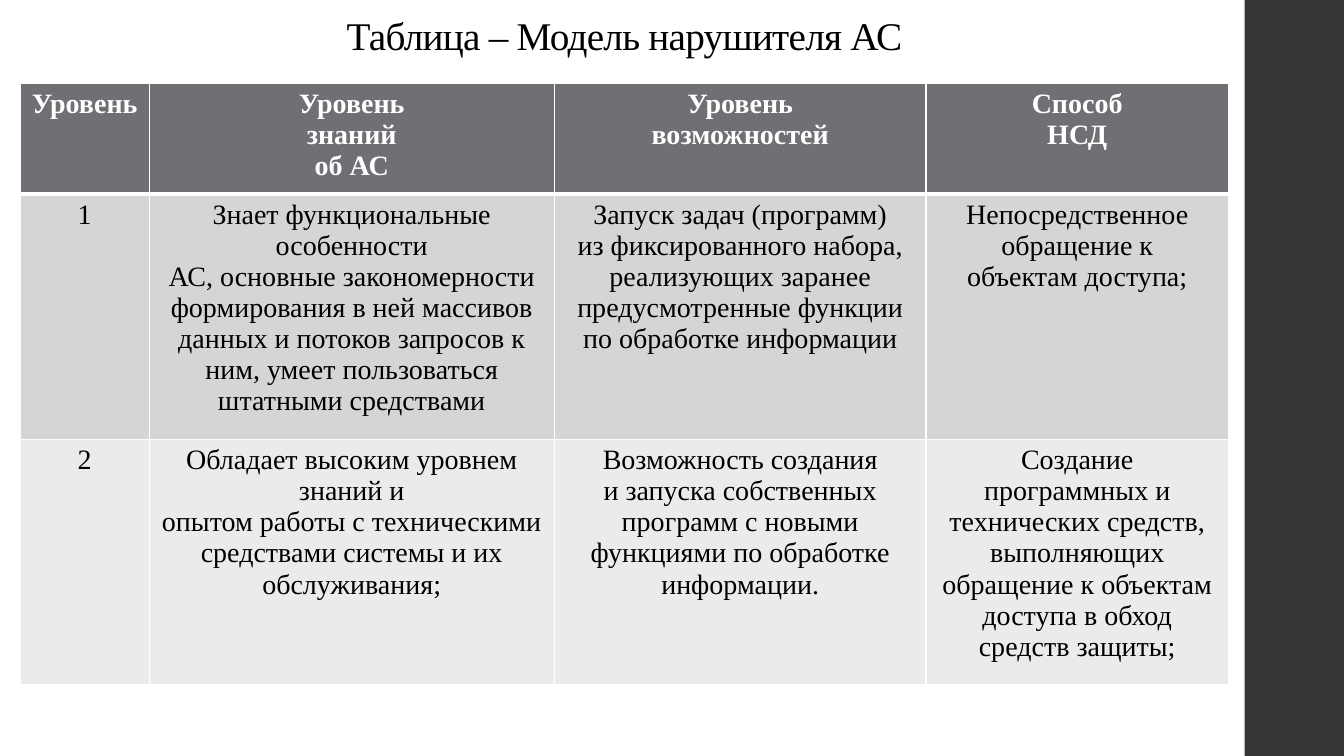
import dataclasses

import lxml.etree
import pptx
import pptx.dml.color
import pptx.enum.shapes
import pptx.enum.text
import pptx.oxml.ns
import pptx.util

Pt = pptx.util.Pt
RGB = pptx.dml.color.RGBColor
Align = pptx.enum.text.PP_ALIGN
Anchor = pptx.enum.text.MSO_ANCHOR
qn = pptx.oxml.ns.qn

WHITE = RGB(0xFF, 0xFF, 0xFF)
BLACK = RGB(0, 0, 0)
DARK = RGB(0x35, 0x35, 0x37)
SLATE = RGB(0x6F, 0x6F, 0x74)
GREY = RGB(0xD5, 0xD5, 0xD6)
PALE = RGB(0xEB, 0xEB, 0xEB)
FONT = "Times New Roman"


@dataclasses.dataclass
class Row:
    height: float
    fill: RGB
    color: RGB
    bold: bool
    top: float
    base: float
    cells: list[str]


# Table content: a line break starts a new paragraph
WIDTHS = [92, 289.5, 265.5, 216]
ROWS = [
    Row(73, SLATE, WHITE, True, 1, 3, [
        "Уровень",
        "Уровень\nзнаний\nоб АС",
        "Уровень\nвозможностей",
        "Способ\nНСД",
    ]),
    Row(162, GREY, BLACK, False, 3, 1, [
        "1",
        "Знает функциональные особенности\n"
        "АС, основные закономерности формирования в ней массивов данных "
        "и потоков запросов к ним, умеет пользоваться штатными средствами",
        "Запуск задач (программ)\n"
        "из фиксированного набора, реализующих заранее\n"
        "предусмотренные функции по обработке информации",
        "Непосредственное обращение к\nобъектам доступа;",
    ]),
    Row(162, PALE, BLACK, False, 1, 1, [
        "2",
        "Обладает высоким уровнем знаний и\n"
        "опытом работы с техническими средствами системы и их обслуживания;",
        "Возможность создания\nи запуска собственных\n"
        "программ с новыми функциями по обработке информации.",
        "Создание программных и технических средств,\n"
        "выполняющих обращение к объектам доступа в обход средств защиты;",
    ]),
]


def write(frame, text: str, *, size: float, color: RGB = BLACK,
          bold: bool = False, space: float | None = None,
          track: float = 0) -> None:
    """Fill a text frame with centred paragraphs."""
    frame.word_wrap = True
    for i, line in enumerate(text.split("\n")):
        para = frame.paragraphs[0] if i == 0 else frame.add_paragraph()
        para.alignment = Align.CENTER
        if space:
            para.line_spacing = space
        run = para.add_run()
        run.text = line
        run.font.name = FONT
        run.font.size = Pt(size)
        run.font.bold = bold
        run.font.color.rgb = color
        if track:
            run._r.get_or_add_rPr().set("spc", str(round(track * 100)))


def edge(cell, top: float, base: float) -> None:
    """Draw white borders around a cell."""
    props = cell._tc.get_or_add_tcPr()
    sides = {"L": 1, "R": 1, "T": top, "B": base}
    for i, (side, width) in enumerate(sides.items()):
        line = lxml.etree.Element(qn(f"a:ln{side}"), w=str(Pt(width)))
        fill = lxml.etree.SubElement(line, qn("a:solidFill"))
        lxml.etree.SubElement(fill, qn("a:srgbClr"), val=str(WHITE))
        props.insert(i, line)


def grid(slide, left: float, top: float, rows: list[Row]) -> None:
    """Build the table."""
    table = slide.shapes.add_table(
        len(rows), len(WIDTHS), Pt(left), Pt(top),
        Pt(sum(WIDTHS)), Pt(sum(row.height for row in rows))).table
    for col, width in zip(table.columns, WIDTHS):
        col.width = Pt(width)
    for r, row in enumerate(rows):
        table.rows[r].height = Pt(row.height)
        for c, text in enumerate(row.cells):
            cell = table.cell(r, c)
            cell.fill.solid()
            cell.fill.fore_color.rgb = row.fill
            edge(cell, row.top, row.base)
            write(cell.text_frame, text, size=20, color=row.color,
                  bold=row.bold)


def main() -> None:
    deck = pptx.Presentation()
    deck.slide_width, deck.slide_height = Pt(960), Pt(540)
    slide = deck.slides.add_slide(deck.slide_layouts[6])

    # Side band
    band = slide.shapes.add_shape(
        pptx.enum.shapes.MSO_SHAPE.RECTANGLE,
        Pt(889), Pt(0), Pt(71), Pt(540))
    band.shadow.inherit = False
    band.fill.solid()
    band.fill.fore_color.rgb = DARK
    band.line.fill.background()

    # Title
    title = slide.shapes.add_textbox(Pt(24.5), Pt(0), Pt(843), Pt(46))
    title.text_frame.vertical_anchor = Anchor.BOTTOM
    write(title.text_frame, "Таблица – Модель нарушителя АС",
          size=28, space=0.9, track=-0.5)

    # Table
    grid(slide, 14.5, 59.5, ROWS)

    deck.save("out.pptx")


if __name__ == "__main__":
    main()
